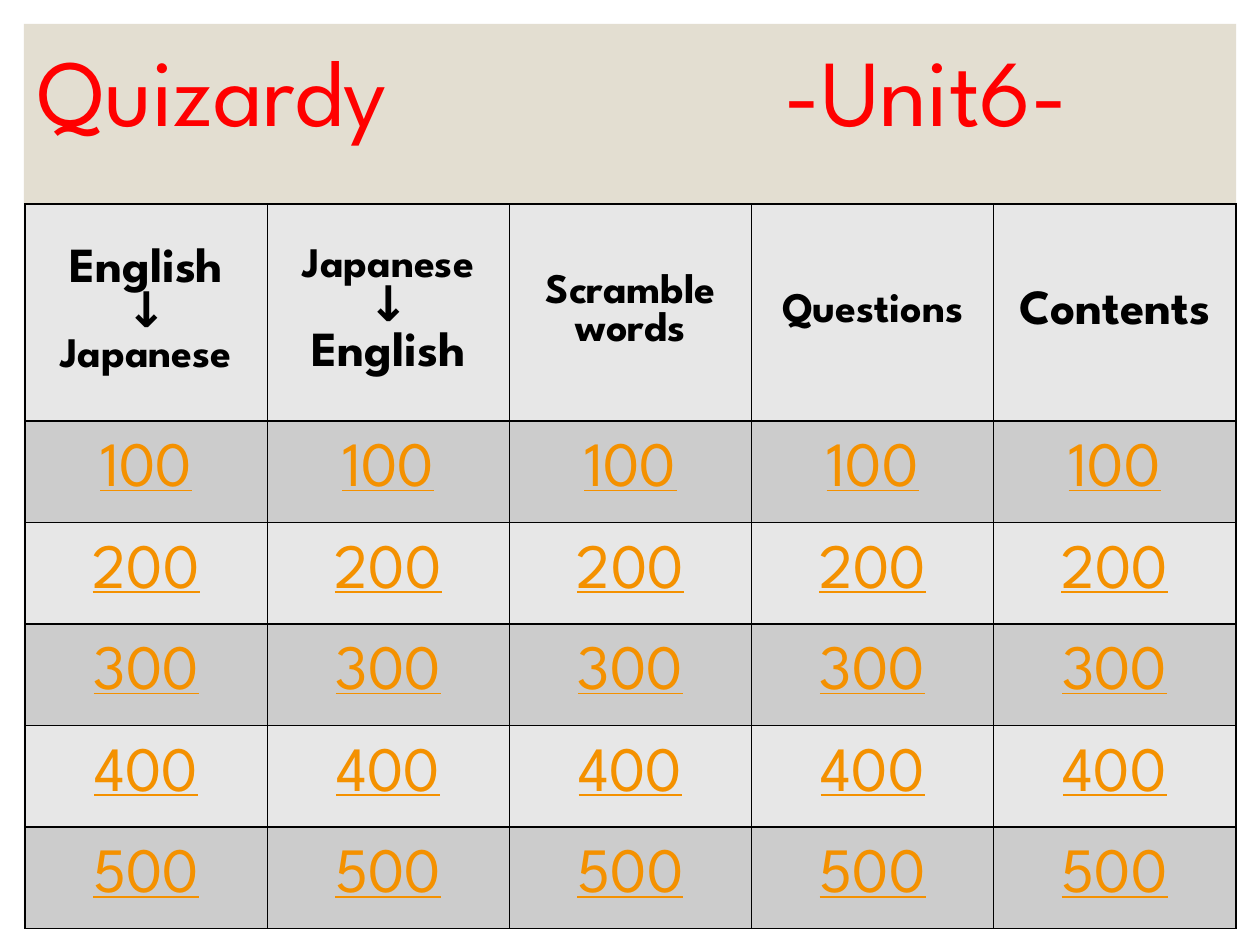
"""Build a quiz board slide with a title band and a table of linked-style scores."""
import pptx
import pptx.dml.color
import pptx.enum.shapes
import pptx.enum.text
import pptx.oxml
import pptx.oxml.ns
import pptx.util
from lxml import etree
from pptx.util import Inches

HEADINGS = [
    [("English", 28), ("↓", 28), ("Japanese", 24)],
    [("Japanese", 24), ("↓", 28), ("English", 28)],
    [("Scramble words", 24)],
    [("Questions", 24)],
    [("Contents", 28)],
]
SCORES = [100, 200, 300, 400, 500]
BANDS = ["E7E7E7", "CCCCCC"]


def rgb(color):
    return pptx.dml.color.RGBColor.from_string(color)


def add_xml(parent, tag, **attrs):
    return etree.SubElement(parent, pptx.oxml.ns.qn(tag), attrs)


class Board:
    font = "League Spartan"
    ink = "000000"
    accent = "F49100"

    def __init__(self, slide):
        self.s = slide

    def style(self, p, size, color, bold=False, underline=False):
        f = p.font
        f.name, f.size = self.font, pptx.util.Pt(size)
        f.bold, f.underline = bold, underline
        f.color.rgb = rgb(color)

    def backdrop(self, x, y, w, h, color):
        sp = self.s.shapes.add_shape(
            pptx.enum.shapes.MSO_SHAPE.RECTANGLE,
            Inches(x), Inches(y), Inches(w), Inches(h))
        sp.shadow.inherit = False
        sp.fill.solid()
        sp.fill.fore_color.rgb = rgb(color)
        sp.line.fill.background()
        self.s.shapes._spTree.insert(2, sp._element)

    def title(self, text, x, y, w, h, tab):
        sp = self.s.shapes.title
        sp.left, sp.top, sp.width, sp.height = map(Inches, (x, y, w, h))
        tf = sp.text_frame
        tf.text = text
        tf.auto_size = pptx.enum.text.MSO_AUTO_SIZE.NONE
        tf.vertical_anchor = pptx.enum.text.MSO_ANCHOR.MIDDLE
        p = tf.paragraphs[0]
        p.alignment = pptx.enum.text.PP_ALIGN.LEFT
        p.line_spacing = 0.9
        tabs = add_xml(p._p.get_or_add_pPr(), "a:tabLst")
        add_xml(tabs, "a:tab", pos=str(Inches(tab)), algn="l")
        self.style(p, 54, "FF0000")

    def borders(self, cell):
        tcPr = cell._tc.get_or_add_tcPr()
        for side in ("a:lnL", "a:lnR", "a:lnT", "a:lnB"):
            ln = add_xml(tcPr, side, w=str(pptx.util.Pt(1)))
            add_xml(add_xml(ln, "a:solidFill"), "a:srgbClr", val=self.ink)

    def cell(self, cell, lines, fill, **look):
        self.borders(cell)
        cell.fill.solid()
        cell.fill.fore_color.rgb = rgb(fill)
        cell.vertical_anchor = pptx.enum.text.MSO_ANCHOR.MIDDLE
        tf = cell.text_frame
        tf.text = "\n".join(text for text, size in lines)
        for p, (text, size) in zip(tf.paragraphs, lines):
            p.alignment = pptx.enum.text.PP_ALIGN.CENTER
            self.style(p, size, **look)

    def table(self, x, y, w, h, head):
        rows, cols = len(SCORES) + 1, len(HEADINGS)
        table = self.s.shapes.add_table(
            rows, cols, Inches(x), Inches(y), Inches(w), Inches(h)).table
        table.first_row = table.horz_banding = False
        for col in table.columns:
            col.width = Inches(w / cols)
        for i, row in enumerate(table.rows):
            row.height = Inches((h - head) / len(SCORES) if i else head)
        for j, lines in enumerate(HEADINGS):
            self.cell(table.cell(0, j), lines, BANDS[0], color=self.ink, bold=True)
            for i, score in enumerate(SCORES, 1):
                self.cell(table.cell(i, j), [(str(score), 36)], BANDS[i % 2],
                          color=self.accent, underline=True)


def main():
    prs = pptx.Presentation()
    prs.slide_width, prs.slide_height = Inches(10), Inches(7.5)
    board = Board(prs.slides.add_slide(prs.slide_layouts[5]))
    board.backdrop(0.19, 0.19, 9.62, 7.12, "E3DED1")
    board.title("Quizardy\t-Unit6-", 0.2, 0.3, 9.61, 0.93, tab=5.93)
    board.table(0.2, 1.62, 9.61, 5.75, head=1.72)
    prs.save("out.pptx")


if __name__ == "__main__":
    main()
